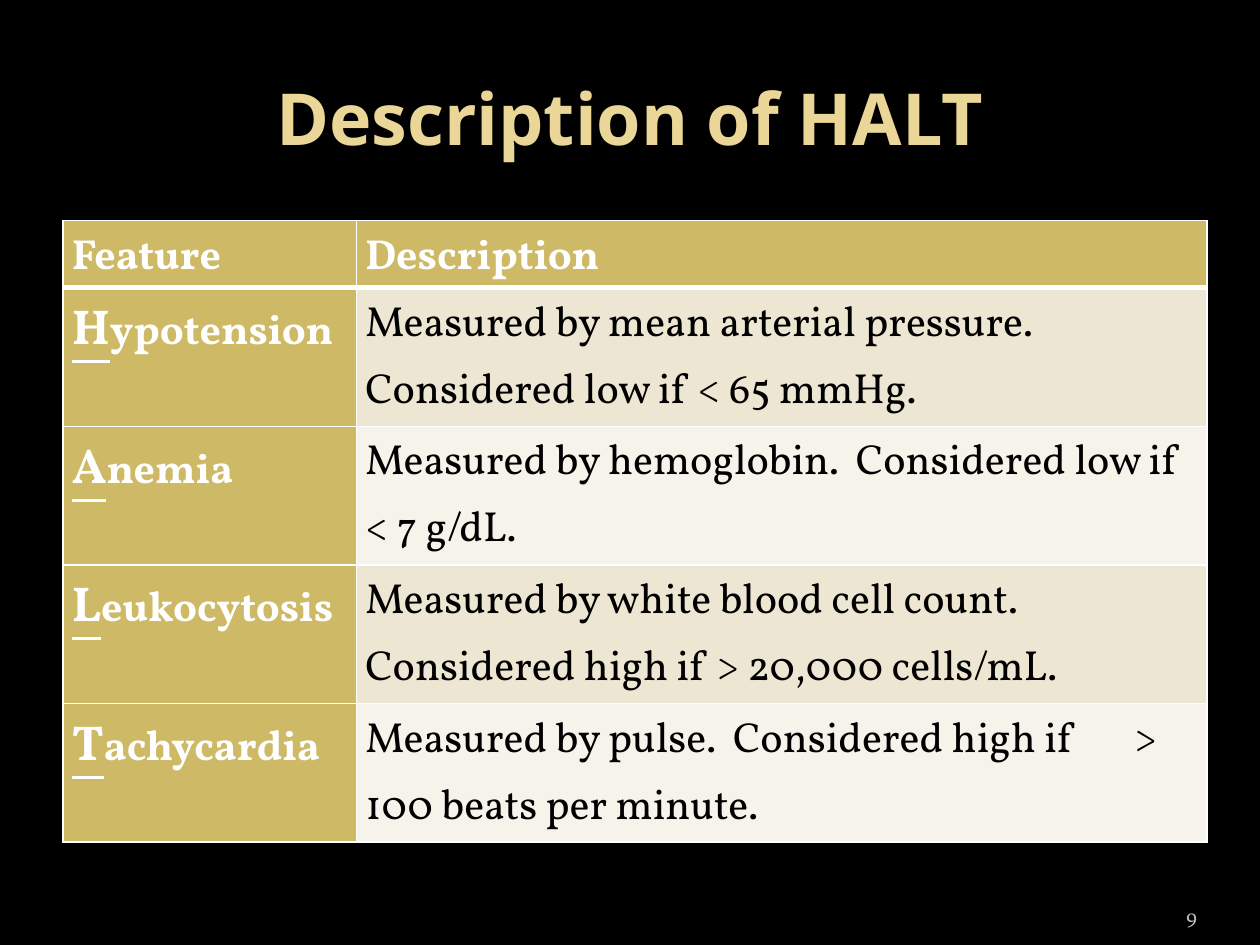
from dataclasses import dataclass

from lxml.etree import SubElement as Sub
from pptx import Presentation
from pptx.dml.color import RGBColor as Rgb
from pptx.enum.text import MSO_ANCHOR as Anchor, PP_ALIGN as Align
from pptx.oxml.ns import qn
from pptx.util import Inches, Pt


@dataclass(frozen=True)
class Theme:
    back: str = "000000"
    title: str = "EAD696"
    gold: str = "CEB966"
    bands: tuple = ("EDE6D3", "F6F3EA")
    light: str = "FFFFFF"
    dark: str = "000000"
    grey: str = "BDBDBD"
    head: str = "Open Sans"
    body: str = "Vollkorn"
    big: int = 41
    cap: int = 28
    text: int = 24
    small: int = 12


T = Theme()
TITLE = "Description of HALT"
PAGE = "9"
HEADS = ("Feature", "Description")
ROWS = [
    ("Hypotension", "Measured by mean arterial pressure.  Considered low if < 65 mmHg."),
    ("Anemia", "Measured by hemoglobin.  Considered low if < 7 g/dL."),
    ("Leukocytosis", "Measured by white blood cell count.  Considered high if > 20,000 cells/mL."),
    ("Tachycardia", "Measured by pulse.  Considered high if\t> 100 beats per minute."),
]
COLS = (2.33, 6.75)
HEAD_H, ROW_H = 0.53, 1.1
LEFT, TOP = 0.5, 1.75
TAB = 6.1


def style(run, size, color, face=T.body, bold=False):
    font = run.font
    font.size, font.name, font.bold = Pt(size), face, bold
    font.color.rgb = Rgb.from_string(color)


def edge(cell, side, width):
    props = cell._tc.get_or_add_tcPr()
    line = Sub(props, qn("a:ln" + side), w=str(Pt(width)))
    Sub(Sub(line, qn("a:solidFill")), qn("a:srgbClr"), val=T.light)


def dress(cell, fill, top=1, bottom=1):
    """Give a cell its margins, borders and fill; borders must precede the fill."""
    cell.margin_left = cell.margin_right = Inches(0.07)
    cell.margin_top = cell.margin_bottom = 0
    for side, width in zip("LRTB", (1, 1, top, bottom)):
        edge(cell, side, width)
    cell.fill.solid()
    cell.fill.fore_color.rgb = Rgb.from_string(fill)


def write(cell, parts, color, bold):
    """Fill a cell with (text, size, underline) parts."""
    para = cell.text_frame.paragraphs[0]
    para.line_spacing = 1.15
    for text, size, under in parts:
        run = para.add_run()
        run.text = text
        style(run, size, color, bold=bold)
        run.font.underline = under
    if any("\t" in part[0] for part in parts):
        tabs = Sub(para._p.get_or_add_pPr(), qn("a:tabLst"))
        Sub(tabs, qn("a:tab"), pos=str(Inches(TAB)), algn="l")


def add_title(slide):
    box = slide.shapes.title
    box.left, box.top, box.width, box.height = map(Inches, (0.5, 0.3, 9, 1.25))
    frame = box.text_frame
    frame.text = TITLE
    frame.vertical_anchor = Anchor.MIDDLE
    para = frame.paragraphs[0]
    para.alignment = Align.CENTER
    style(para.runs[0], T.big, T.title, T.head, True)


def add_grid(slide):
    high = HEAD_H + ROW_H * len(ROWS)
    size = map(Inches, (LEFT, TOP, sum(COLS), high))
    table = slide.shapes.add_table(len(ROWS) + 1, len(COLS), *size).table
    for col, width in zip(table.columns, COLS):
        col.width = Inches(width)
    for n, row in enumerate(table.rows):
        row.height = Inches(ROW_H if n else HEAD_H)

    for n, head in enumerate(HEADS):
        cell = table.cell(0, n)
        dress(cell, T.gold, bottom=3)
        write(cell, [(head, T.text, False)], T.light, True)
    for n, (name, note) in enumerate(ROWS, 1):
        top = 3 if n == 1 else 1
        key, info = table.cell(n, 0), table.cell(n, 1)
        dress(key, T.gold, top)
        write(key, [(name[0], T.cap, True), (name[1:], T.text, False)], T.light, True)
        dress(info, T.bands[(n - 1) % 2], top)
        write(info, [(note, T.text, False)], T.dark, False)


def add_page(slide):
    box = slide.shapes.add_textbox(*map(Inches, (8.67, 7.02, 0.83, 0.4)))
    frame = box.text_frame
    frame.word_wrap = True
    frame.margin_left = frame.margin_right = 0
    frame.vertical_anchor = Anchor.BOTTOM
    frame.text = PAGE
    para = frame.paragraphs[0]
    para.alignment = Align.RIGHT
    style(para.runs[0], T.small, T.grey)


def main():
    deck = Presentation()
    deck.slide_width, deck.slide_height = Inches(10), Inches(7.5)
    slide = deck.slides.add_slide(deck.slide_layouts[5])
    back = slide.background.fill
    back.solid()
    back.fore_color.rgb = Rgb.from_string(T.back)
    add_title(slide)
    add_grid(slide)
    add_page(slide)
    deck.save("out.pptx")


if __name__ == "__main__":
    main()
